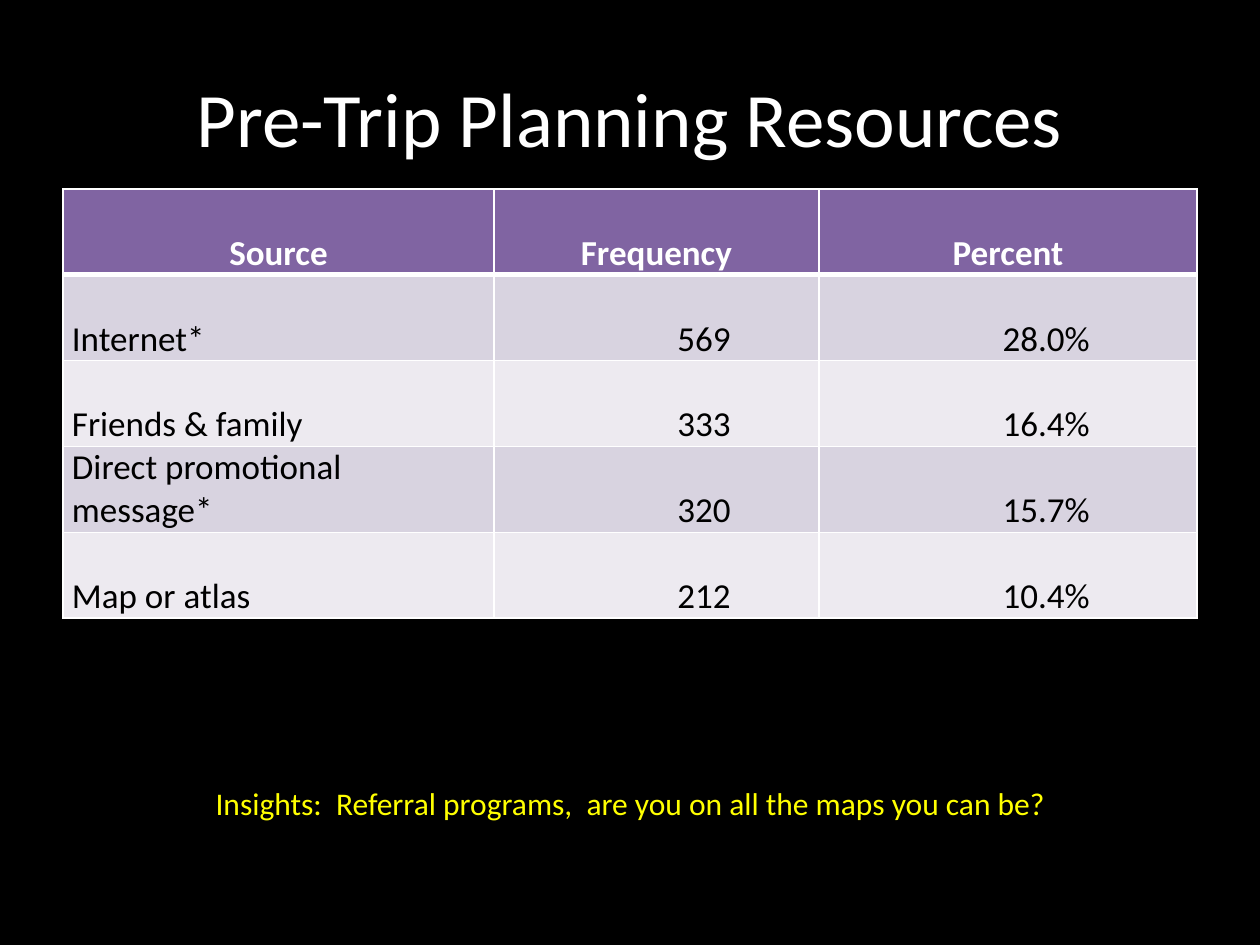
from lxml import etree
from pptx import Presentation, util as u
from pptx.dml.color import RGBColor
from pptx.enum import text as t
from pptx.oxml.ns import qn

# Content
TITLE = "Pre-Trip Planning Resources"
HEAD = ("Source", "Frequency", "Percent")
ROWS = [
    ("Internet*", "569", "28.0%"),
    ("Friends & family", "333", "16.4%"),
    ("Direct promotional message*", "320", "15.7%"),
    ("Map or atlas", "212", "10.4%"),
]
NOTE = "Insights:  Referral programs,  are you on all the maps you can be?"

# Layout in cm
WIDTHS = (8.69, 6.55, 7.62)
INSETS = (0.18, 1.78, 2.16)  # right inset of the body cells in each column
ROW_H = 1.73
PAD = 0.18
WHITE, BLACK, YELLOW = "FFFFFF", "000000", "FFFF00"
PURPLE, BANDS = "8064A2", ("D8D3E0", "EDEAF0")
LEFT, MID, RIGHT = t.PP_ALIGN.LEFT, t.PP_ALIGN.CENTER, t.PP_ALIGN.RIGHT


def color(code):
    return RGBColor.from_string(code)


def write(frame, words, size=20, ink=BLACK, bold=False, align=MID, space=1):
    frame.word_wrap = True
    para = frame.paragraphs[0]
    para.alignment, para.line_spacing = align, space
    run = para.add_run()
    run.text = words
    font = run.font
    font.name, font.size, font.bold = "Calibri", u.Pt(size), bold
    font.color.rgb = color(ink)


def add_box(slide, x, y, w, h, words, **form):
    box = slide.shapes.add_textbox(u.Cm(x), u.Cm(y), u.Cm(w), u.Cm(h))
    box.text_frame.vertical_anchor = t.MSO_ANCHOR.MIDDLE
    write(box.text_frame, words, **form)


def edge(cell, side, points):
    props = cell._tc.get_or_add_tcPr()
    line = etree.Element(qn("a:" + side), w=str(u.Pt(points)))
    fill = etree.SubElement(line, qn("a:solidFill"))
    etree.SubElement(fill, qn("a:srgbClr"), val=WHITE)
    # Borders come before the fill, in the order they are added
    props.insert(len(props) - 1, line)


def add_grid(slide, x, y):
    data = [HEAD] + ROWS
    grid = slide.shapes.add_table(
        len(data), len(HEAD), u.Cm(x), u.Cm(y),
        u.Cm(sum(WIDTHS)), u.Cm(ROW_H * len(data))).table
    for col, width in zip(grid.columns, WIDTHS):
        col.width = u.Cm(width)
    for r, row in enumerate(data):
        grid.rows[r].height = u.Cm(ROW_H)
        top = r == 0
        for c, words in enumerate(row):
            cell = grid.cell(r, c)
            cell.vertical_anchor = t.MSO_ANCHOR.BOTTOM
            cell.margin_top = cell.margin_bottom = 0
            cell.margin_left = u.Cm(PAD)
            cell.margin_right = u.Cm(PAD if top else INSETS[c])
            cell.fill.solid()
            cell.fill.fore_color.rgb = color(PURPLE if top else BANDS[(r - 1) % 2])
            for side in ("lnL", "lnR", "lnT", "lnB"):
                thick = (top and side == "lnB") or (r == 1 and side == "lnT")
                edge(cell, side, 3 if thick else 1)
            # The long label wraps onto two single-spaced lines
            write(cell.text_frame, words, ink=WHITE if top else BLACK, bold=top,
                  align=MID if top else RIGHT if c else LEFT,
                  space=1 if len(words) > 20 else 2.0)


def main():
    deck = Presentation()
    deck.slide_width, deck.slide_height = u.Cm(25.4), u.Cm(19.05)
    slide = deck.slides.add_slide(deck.slide_layouts[6])
    slide.background.fill.solid()
    slide.background.fill.fore_color.rgb = color(BLACK)

    # Title, table and closing note
    add_box(slide, 1.27, 0.76, 22.86, 3.18, TITLE, size=44, ink=WHITE)
    add_grid(slide, 1.27, 3.81)
    add_box(slide, 1.7, 15.67, 22.02, 1.02, NOTE, size=18, ink=YELLOW)
    deck.save("out.pptx")


if __name__ == "__main__":
    main()
